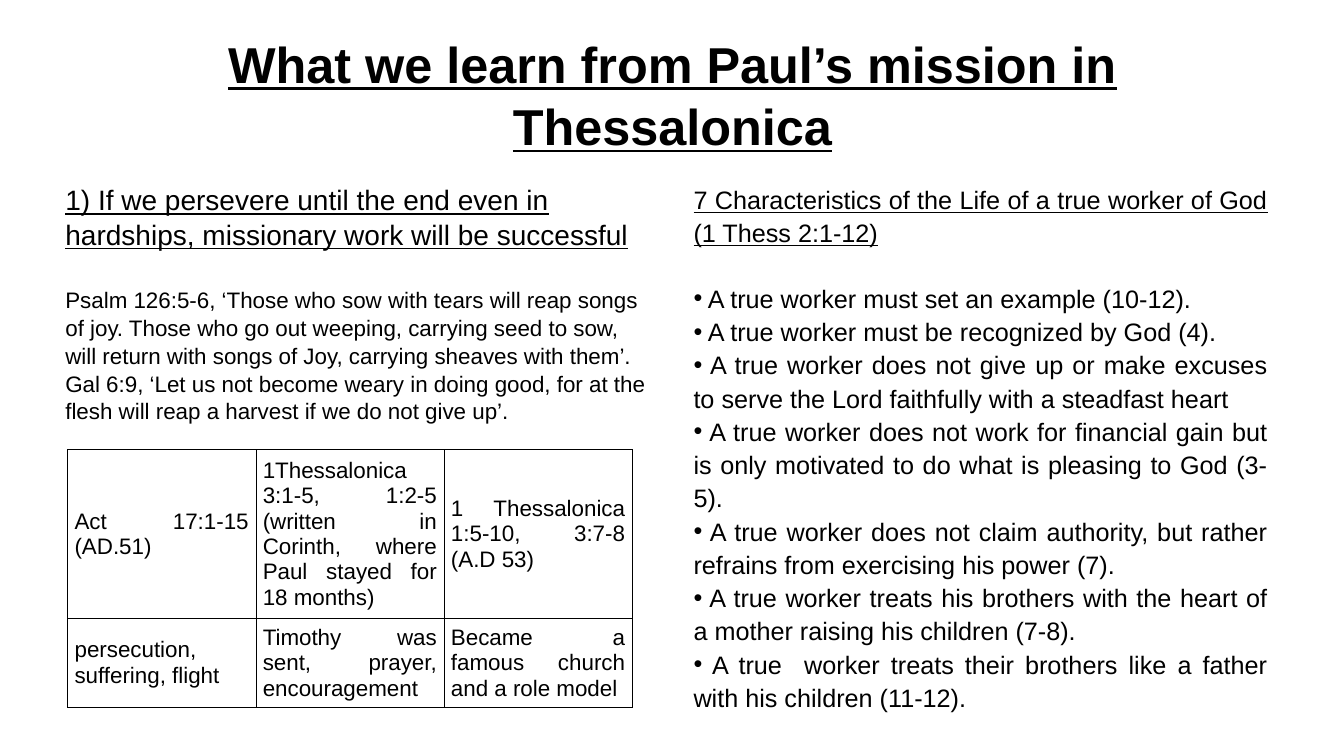
from pptx import Presentation
from pptx.dml.color import RGBColor
from pptx.enum.text import MSO_ANCHOR, PP_ALIGN
from pptx.oxml import parse_xml
from pptx.oxml.ns import nsdecls
from pptx.util import Inches, Pt

BLACK = RGBColor(0, 0, 0)
FONT = "Arial"
LEFT, CENTER, JUSTIFY = PP_ALIGN.LEFT, PP_ALIGN.CENTER, PP_ALIGN.JUSTIFY
TOP, MIDDLE = MSO_ANCHOR.TOP, MSO_ANCHOR.MIDDLE

TITLE = "What we learn from Paul’s mission in Thessalonica"
LESSON = ("1) If we persevere until the end even in hardships, "
          "missionary work will be successful")
VERSES = [
    "Psalm 126:5-6, ‘Those who sow with tears will reap songs of joy. Those who go out "
    "weeping, carrying seed to sow, will return with songs of Joy, carrying sheaves with them’.",
    "Gal 6:9, ‘Let us not become weary in doing good, for at the flesh will reap a harvest "
    "if we do not give up’.",
]
TIMELINE = [
    ["Act 17:1-15 (AD.51)",
     "1Thessalonica 3:1-5, 1:2-5 (written in Corinth, where Paul stayed for 18 months)",
     "1 Thessalonica 1:5-10, 3:7-8 (A.D 53)"],
    ["persecution, suffering, flight",
     "Timothy was sent, prayer, encouragement",
     "Became a famous church and a role model"],
]
WORKER_HEADING = "7 Characteristics of the Life of a true worker of God (1 Thess 2:1-12)"
WORKER_TRAITS = [
    "A true worker must set an example (10-12).",
    "A true worker must be recognized by God (4).",
    "A true worker does not give up or make excuses to serve the Lord faithfully "
    "with a steadfast heart",
    "A true worker does not work for financial gain but is only motivated to do what is "
    "pleasing to God (3-5).",
    "A true worker does not claim authority, but rather refrains from exercising his power (7).",
    "A true worker treats his brothers with the heart of a mother raising his children (7-8).",
    "A true  worker treats their brothers like a father with his children (11-12).",
]


def write(p, text, size=16, bold=False, underline=False, align=LEFT,
          spacing=1.0, before=0, bullet=False):
    """Fill one paragraph with formatted text."""
    p.alignment = align
    p.line_spacing = spacing
    p.space_before = Pt(before)
    p.space_after = Pt(0)
    if bullet:
        pPr = p._p.get_or_add_pPr()
        pPr.set("marL", "0")
        pPr.set("indent", "0")
        pPr.append(parse_xml(f'<a:buFont {nsdecls("a")} typeface="{FONT}"/>'))
        pPr.append(parse_xml(f'<a:buChar {nsdecls("a")} char="•"/>'))
        text = " " + text
    r = p.add_run()
    r.text = text
    r.font.name = FONT
    r.font.size = Pt(size)
    r.font.bold = bold
    r.font.underline = underline
    r.font.color.rgb = BLACK


class SlideBuilder:
    def __init__(self, prs):
        self.slide = prs.slides.add_slide(prs.slide_layouts[5])

    def title(self, text, x, y, w, h):
        sp = self.slide.shapes.title
        sp.left, sp.top, sp.width, sp.height = map(Inches, (x, y, w, h))
        tf = sp.text_frame
        tf.word_wrap = True
        tf.vertical_anchor = MIDDLE
        write(tf.paragraphs[0], text, size=36, bold=True, underline=True,
              align=CENTER, spacing=1.03)

    def text(self, items, x, y, w, h, **style):
        """Add a text box; items are (text, format) pairs."""
        sp = self.slide.shapes.add_textbox(*map(Inches, (x, y, w, h)))
        tf = sp.text_frame
        tf.word_wrap = True
        tf.vertical_anchor = TOP
        for i, (text, extra) in enumerate(items):
            p = tf.add_paragraph() if i else tf.paragraphs[0]
            write(p, text, **{**style, **extra})

    def table(self, rows, x, y, w, heights):
        n = len(rows[0])
        frame = self.slide.shapes.add_table(
            len(rows), n, *map(Inches, (x, y, w, sum(heights))))
        table = frame.table
        table.first_row = table.horz_banding = False
        for col in table.columns:
            col.width = Inches(w / n)
        for row, height, texts in zip(table.rows, heights, rows):
            row.height = Inches(height)
            for cell, text in zip(row.cells, texts):
                self.cell(cell, text)

    def cell(self, cell, text):
        cell.margin_left = cell.margin_right = Inches(0.07)
        cell.margin_top = cell.margin_bottom = Inches(0.02)
        cell.vertical_anchor = MIDDLE
        write(cell.text_frame.paragraphs[0], text, align=JUSTIFY, spacing=1.02)
        tcPr = cell._tc.get_or_add_tcPr()
        for side in ("lnL", "lnR", "lnT", "lnB"):
            tcPr.append(parse_xml(
                f'<a:{side} {nsdecls("a")} w="{Pt(0.25)}"><a:solidFill>'
                f'<a:srgbClr val="{BLACK}"/></a:solidFill></a:{side}>'))
        cell.fill.background()


def main():
    prs = Presentation()
    prs.slide_width, prs.slide_height = Inches(13.33), Inches(7.5)
    page = SlideBuilder(prs)

    page.title(TITLE, 0.67, 0.3, 12, 1.25)

    # Left column: lesson, verses and timeline
    lesson = [(LESSON, {"size": 20, "underline": True})]
    verses = [(v, {"before": 0 if i else 24}) for i, v in enumerate(VERSES)]
    page.text(lesson + verses, 0.55, 1.75, 5.96, 2.6, spacing=1.04)
    page.table(TIMELINE, 0.67, 4.46, 5.6, [1.61, 0.89])

    # Right column: marks of a true worker
    heading = [(WORKER_HEADING, {"underline": True})]
    traits = [(t, {"bullet": True, "before": 0 if i else 23})
              for i, t in enumerate(WORKER_TRAITS)]
    page.text(heading + traits, 6.78, 1.75, 5.89, 4.95,
              size=18, align=JUSTIFY, spacing=1.1)

    prs.save("out.pptx")


if __name__ == "__main__":
    main()
